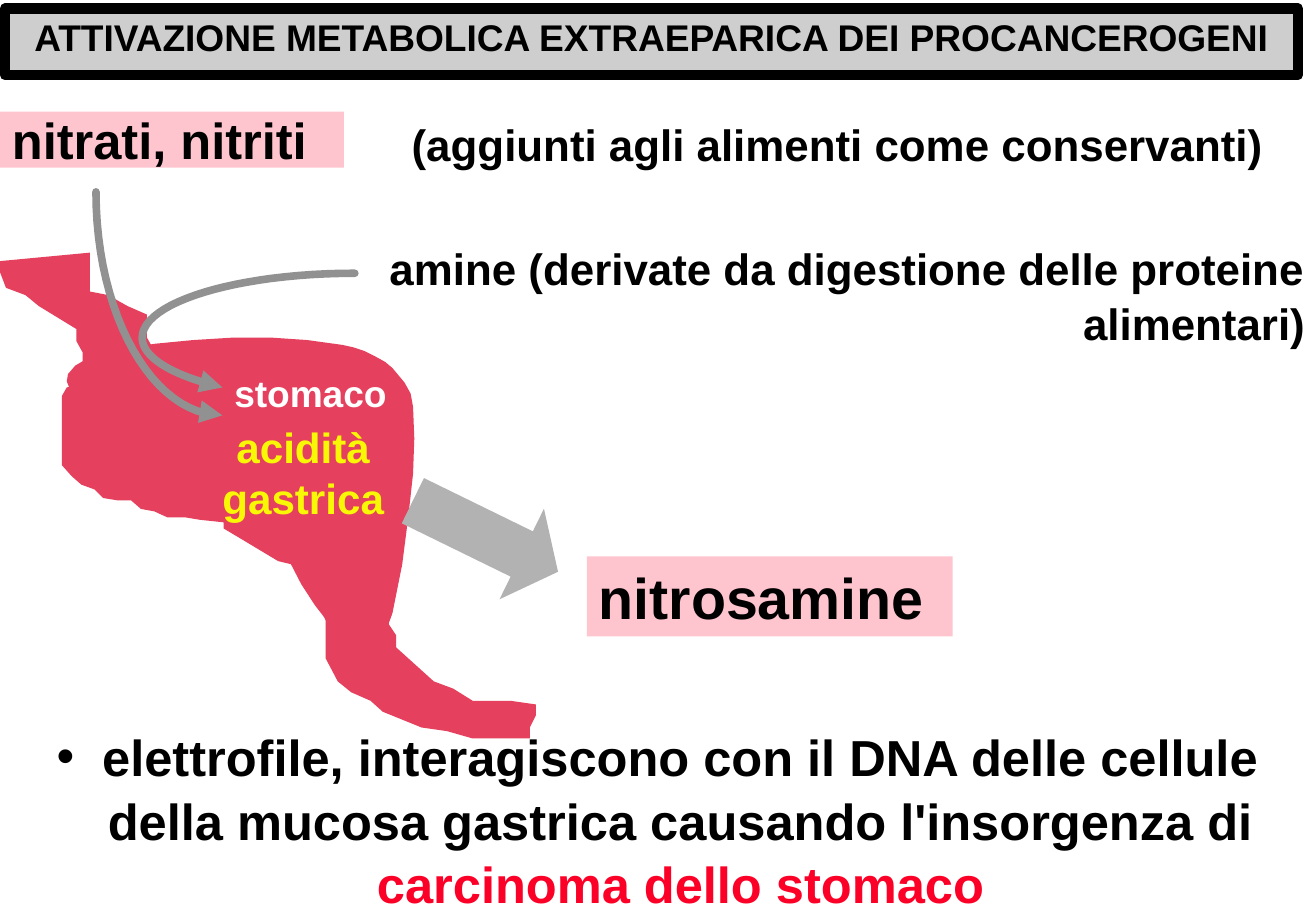
from lxml.etree import SubElement
from pptx import Presentation
from pptx.dml.color import RGBColor
from pptx.enum.shapes import MSO_SHAPE
from pptx.enum.text import MSO_ANCHOR, MSO_AUTO_SIZE, PP_ALIGN
from pptx.oxml.ns import qn
from pptx.util import Inches, Pt

COLORS = {
    "black": "000000", "white": "FFFFFF", "red": "FC0128", "yellow": "F8F806",
    "pink": "FFC5CF", "organ": "E5405D", "silver": "CECECE", "arrow": "B2B2B2",
    "curve": "919191",
}

BULGE = [
    (3.23, 5.05), (3.31, 4.65), (3.36, 4.26), (3.4, 3.9), (3.41, 3.61),
    (3.4, 3.35), (3.38, 3.24), (3.33, 3.15), (3.23, 3.03), (3.17, 2.98),
    (3.08, 2.93), (3, 2.89), (2.91, 2.86), (2.82, 2.84), (2.53, 2.8),
    (2.24, 2.78), (1.91, 2.78), (1.59, 2.8), (1.28, 2.83), (1.01, 2.87),
    (0.89, 2.89), (0.74, 2.94), (0.62, 3.01), (0.56, 3.08), (0.55, 3.14),
    (0.57, 3.19), (0.66, 3.24), (1.02, 3.41), (1.27, 3.54), (1.52, 3.69),
    (1.79, 3.91), (1.97, 4.07), (2.09, 4.19), (2.18, 4.3), (2.32, 4.5),
    (2.48, 4.81), (2.59, 4.98), (2.69, 5.11), (2.76, 5.17), (2.82, 5.22),
    (2.89, 5.26), (2.99, 5.28), (3.07, 5.29), (3.13, 5.28), (3.16, 5.24),
]
FUNDUS = [
    (1.38, 2.99), (0.55, 3.19), (0.51, 3.26), (0.51, 3.83), (0.59, 3.92),
    (0.67, 3.99), (0.78, 4.03), (0.85, 4.1), (0.97, 4.12), (1.08, 4.12),
    (1.16, 4.19), (1.27, 4.21), (1.38, 4.26), (1.53, 4.26), (1.65, 4.28),
    (1.84, 4.3), (1.84, 4.35), (1.99, 4.44), (2.29, 4.62), (3.05, 4.8),
]
OUTLET = [
    (2.63, 4.98), (2.68, 5.11), (2.68, 5.42), (2.78, 5.61), (2.89, 5.7),
    (3.05, 5.77), (3.15, 5.86), (3.47, 5.99), (3.68, 6.02), (3.89, 6.08),
    (4.36, 6.08), (4.36, 5.99), (4.41, 5.89), (4.41, 5.8), (4.2, 5.77),
    (3.89, 5.77), (3.73, 5.67), (3.57, 5.61), (3.26, 5.33), (3.26, 5.23),
    (3.2, 5.14), (3.2, 5.04),
]
INLET = [
    (0.74, 3.09), (0.68, 3), (0.68, 2.9), (0.63, 2.81), (0.63, 2.71),
    (0.32, 2.52), (0.21, 2.43), (0.05, 2.37), (0, 2.24), (0, 2.15),
    (0.74, 2.08), (0.74, 2.4), (0.89, 2.43), (1.05, 2.52), (1.21, 2.59),
    (1.21, 2.78), (1.26, 2.87),
]


def tint(name):
    return RGBColor.from_string(COLORS[name])


def bezier(ends, steps=24):
    for step in range(1, steps + 1):
        t = step / steps
        u = 1 - t
        parts = (u ** 3, 3 * u * u * t, 3 * u * t * t, t ** 3)
        yield tuple(sum(w * p[axis] for w, p in zip(parts, ends)) for axis in (0, 1))


class Board:
    font = "Arial"

    def __init__(self, deck):
        self.slide = deck.slides.add_slide(deck.slide_layouts[1])
        self.shapes = self.slide.shapes

    def place(self, shape, box):
        shape.left, shape.top, shape.width, shape.height = map(Inches, box)

    def paint(self, shape, color):
        shape.shadow.inherit = False
        shape.fill.solid()
        shape.fill.fore_color.rgb = tint(color)
        shape.line.fill.background()

    def letter(self, shape, text, size, color="black", align=PP_ALIGN.LEFT,
               anchor=MSO_ANCHOR.TOP, spacing=1.0):
        frame = shape.text_frame
        frame.text = text
        frame.word_wrap = True
        frame.auto_size = MSO_AUTO_SIZE.NONE
        frame.vertical_anchor = anchor
        para = frame.paragraphs[0]
        para.alignment = align
        para.space_before = Pt(0)
        para.line_spacing = spacing
        self.style(para.runs[0], size, color)
        return para

    def style(self, run, size, color):
        font = run.font
        font.name, font.size, font.bold = self.font, Pt(size), True
        font.color.rgb = tint(color)

    def title(self, text, box, size):
        shape = self.shapes.title
        self.place(shape, box)
        self.paint(shape, "silver")
        shape.line.color.rgb = tint("black")
        shape.line.width = Pt(6)
        self.letter(shape, text, size, align=PP_ALIGN.CENTER)

    def body(self, text, accent, box, size):
        shape = self.slide.placeholders[1]
        self.place(shape, box)
        shape.text_frame.text = text
        props = shape.text_frame.paragraphs[0]._p.get_or_add_pPr()
        props.set("marL", "0")
        props.set("indent", "0")
        hue = SubElement(props, qn("a:buClr"))
        SubElement(hue, qn("a:srgbClr"), val=COLORS["red"])
        SubElement(props, qn("a:buSzPct"), val="135000")
        SubElement(props, qn("a:buChar"), char="☛")
        para = self.letter(shape, text, size, align=PP_ALIGN.CENTER, spacing=1.05)
        run = para.add_run()
        run.text = accent
        self.style(run, size, "red")

    def panel(self, text, box, size, fill, **look):
        shape = self.shapes.add_shape(MSO_SHAPE.RECTANGLE, *map(Inches, box))
        self.paint(shape, fill)
        self.letter(shape, text, size, **look)

    def label(self, text, box, size, **look):
        self.letter(self.shapes.add_textbox(*map(Inches, box)), text, size, **look)

    def trace(self, shapes, points, close):
        first, *rest = [(Inches(x), Inches(y)) for x, y in points]
        pen = shapes.build_freeform(*first)
        pen.add_line_segments(rest, close=close)
        return pen.convert_to_shape()

    def organ(self, *outlines):
        group = self.shapes.add_group_shape()
        for points in outlines:
            self.paint(self.trace(group.shapes, points, True), "organ")

    def curve(self, start, *arcs):
        points = [start]
        for arc in arcs:
            points += list(bezier((points[-1], *arc)))
        shape = self.trace(self.shapes, points, False)
        shape.shadow.inherit = False
        shape.fill.background()
        shape.line.color.rgb = tint("curve")
        shape.line.width = Pt(4.5)
        line = shape._element.spPr.find(qn("a:ln"))
        line.set("cap", "rnd")
        SubElement(line, qn("a:round"))
        SubElement(line, qn("a:headEnd"), type="triangle")

    def arrow(self, box, angle):
        shape = self.shapes.add_shape(MSO_SHAPE.RIGHT_ARROW, *map(Inches, box))
        shape.adjustments[0], shape.adjustments[1] = 0.5, 0.4
        shape.rotation = angle
        self.paint(shape, "arrow")


def main():
    deck = Presentation()
    deck.slide_width, deck.slide_height = Inches(10.83), Inches(7.5)
    board = Board(deck)
    board.title("ATTIVAZIONE METABOLICA EXTRAEPARICA DEI PROCANCEROGENI",
                (0.04, 0.07, 10.64, 0.55), 22)
    board.body("elettrofile, interagiscono con il DNA delle cellule della mucosa "
               "gastrica causando l'insorgenza di ", "carcinoma dello stomaco",
               (0, 5.9, 10.83, 1.6), 30)
    board.panel("nitrati, nitriti", (0, 0.92, 2.83, 0.46), 30, "pink",
                anchor=MSO_ANCHOR.MIDDLE)
    board.panel("amine (derivate da digestione delle proteine alimentari)",
                (2.42, 1.92, 8.42, 0.97), 26, "white",
                align=PP_ALIGN.RIGHT, spacing=1.05)
    board.organ(BULGE, FUNDUS, OUTLET, INLET)
    board.label("stomaco", (1.83, 3, 1.46, 0.46), 22, color="white")
    board.curve((1.83, 3.42), ((1.26, 3.42), (0.79, 2.6), (0.79, 1.58)))
    board.curve((1.83, 3.19), ((1.41, 3.09), (1.17, 2.94), (1.17, 2.78)),
                ((1.17, 2.49), (1.95, 2.25), (2.92, 2.25)))
    board.label("(aggiunti agli alimenti come conservanti)",
                (3.17, 0.92, 7.33, 0.53), 26, align=PP_ALIGN.RIGHT)
    board.panel("nitrosamine", (4.83, 4.58, 3.01, 0.66), 34, "pink")
    board.arrow((3.33, 4, 1.33, 0.83), 26.1)
    board.label("acidità gastrica", (1.58, 3.42, 1.83, 0.93), 25,
                color="yellow", align=PP_ALIGN.CENTER)
    deck.save("out.pptx")


if __name__ == "__main__":
    main()
